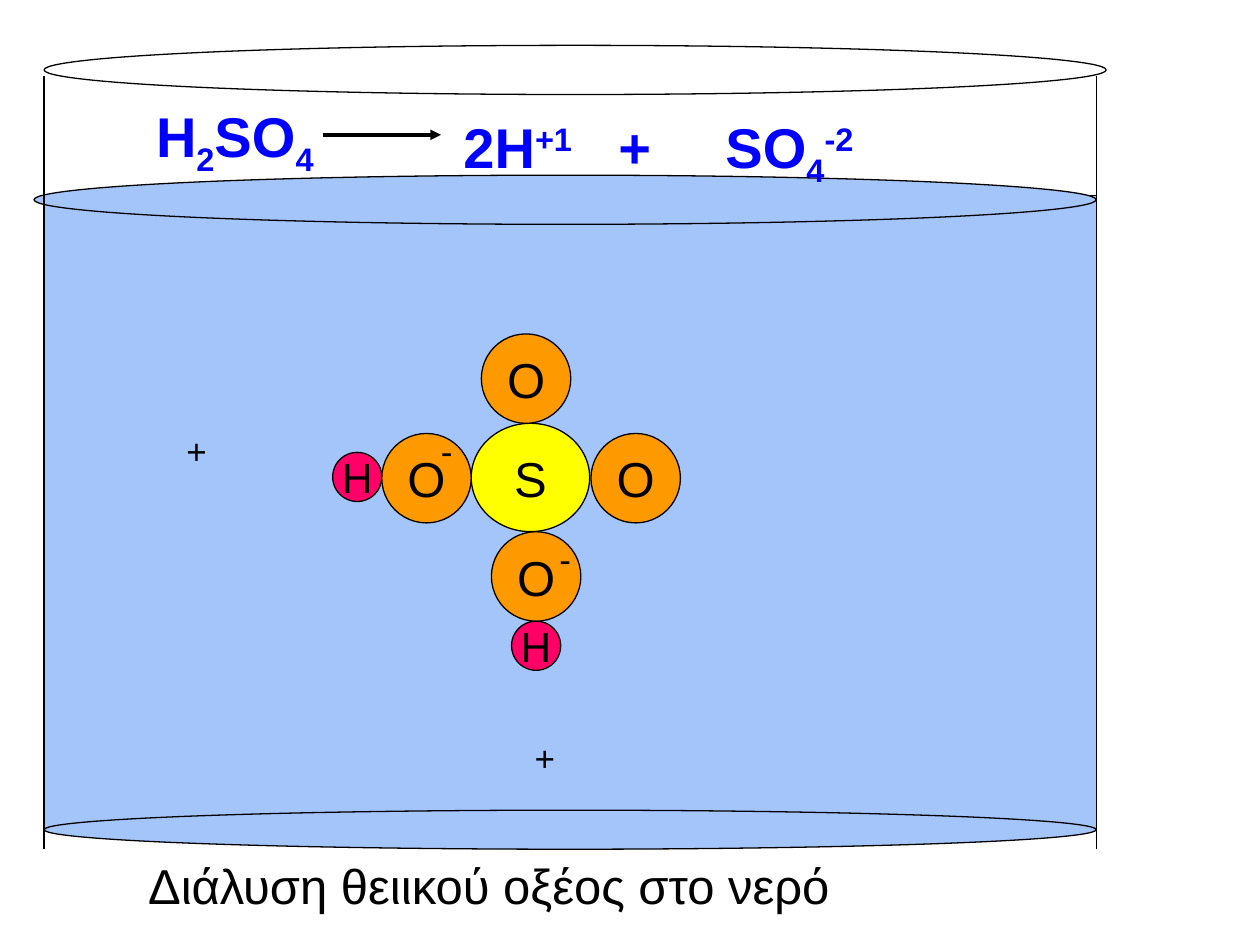
from lxml import etree
from pptx import Presentation
from pptx import util as u
from pptx.dml.color import RGBColor
from pptx.enum import shapes, text
from pptx.oxml.ns import qn

COLORS = {
    "black": "000000",
    "white": "FFFFFF",
    "water": "A4C5FA",
    "sulfur": "FFFF00",
    "oxygen": "FF9900",
    "hydrogen": "FF0066",
    "formula": "0000FF",
}
ATOMS = {
    "S": ("sulfur", 0.94, 0.86, 28),
    "O": ("oxygen", 0.71, 0.71, 28),
    "H": ("hydrogen", 0.39, 0.39, 24),
}
MOLECULE = [
    ("S", 3.74, 3.36),
    ("H", 2.64, 3.59),
    ("H", 4.06, 4.93),
    ("O", 3.9, 4.22),
    ("O", 3.03, 3.44),
    ("O", 3.82, 2.65),
    ("O", 4.69, 3.44),
]
CHARGES = [
    ("+", 1.38, 3.36, 0.31),
    ("-", 3.35, 3.36, 0.39),
    ("+", 4.13, 5.8, 0.39),
    ("-", 4.21, 4.22, 0.55),
]
SUB, SUP = -25000, 30000
LEFT_WALL, RIGHT_WALL = 0.35, 8.7
OVAL = shapes.MSO_SHAPE.OVAL


def rgb(name):
    return RGBColor.from_string(COLORS[name])


def set_font(p, size, color="black", bold=False):
    p.font.name = "Arial"
    p.font.size = u.Pt(size)
    p.font.bold = bold
    p.font.color.rgb = rgb(color)


def add_solid(s, kind, x, y, w, h, fill):
    sp = s.shapes.add_shape(kind, u.Inches(x), u.Inches(y), u.Inches(w), u.Inches(h))
    sp.shadow.inherit = False
    sp.fill.solid()
    sp.fill.fore_color.rgb = rgb(fill)
    sp.line.color.rgb = rgb("black")
    sp.line.width = u.Pt(0.75)
    return sp


def add_line(s, x1, y1, x2, y2, width=0.75, arrow=False):
    c = s.shapes.add_connector(
        shapes.MSO_CONNECTOR.STRAIGHT,
        u.Inches(x1), u.Inches(y1), u.Inches(x2), u.Inches(y2))
    c.line.color.rgb = rgb("black")
    c.line.width = u.Pt(width)
    if arrow:
        etree.SubElement(c.line._get_or_add_ln(), qn("a:tailEnd"), type="triangle")
    etree.SubElement(c._element.spPr, qn("a:effectLst"))


def add_atom(s, symbol, x, y):
    fill, w, h, size = ATOMS[symbol]
    tf = add_solid(s, OVAL, x, y, w, h, fill).text_frame
    tf.word_wrap = False
    tf.vertical_anchor = text.MSO_ANCHOR.MIDDLE
    p = tf.paragraphs[0]
    p.alignment = text.PP_ALIGN.CENTER
    p.add_run().text = symbol
    set_font(p, size)


def add_text(s, x, y, w, h):
    tf = s.shapes.add_textbox(u.Inches(x), u.Inches(y), u.Inches(w), u.Inches(h)).text_frame
    tf.word_wrap = True
    tf.auto_size = text.MSO_AUTO_SIZE.SHAPE_TO_FIT_TEXT
    return tf.paragraphs[0]


def add_label(s, words, x, y, w, h, size):
    p = add_text(s, x, y, w, h)
    p.alignment = text.PP_ALIGN.CENTER
    p.add_run().text = words
    set_font(p, size)


def add_formula(s, parts, x, y, w, tab=None):
    p = add_text(s, x, y, w, 0.63)
    set_font(p, 32, "formula", True)
    if tab:
        tabs = etree.Element(qn("a:tabLst"))
        etree.SubElement(tabs, qn("a:tab"), pos=str(u.Inches(tab)), algn="l")
        p._p.get_or_add_pPr().insert(0, tabs)
    for words, baseline in parts:
        r = p.add_run()
        r.text = words
        if baseline:
            r._r.get_or_add_rPr().set("baseline", str(baseline))


def add_beaker(s):
    w = RIGHT_WALL - LEFT_WALL
    add_solid(s, shapes.MSO_SHAPE.RECTANGLE, LEFT_WALL, 1.55, w, 5.04, "water")
    add_solid(s, OVAL, 0.27, 1.39, 8.43, 0.39, "water")
    add_solid(s, OVAL, LEFT_WALL, 0.36, 8.43, 0.39, "white")
    add_solid(s, OVAL, LEFT_WALL, 6.43, w, 0.31, "water")
    for x in (LEFT_WALL, RIGHT_WALL):
        add_line(s, x, 0.6, x, 6.74)


def add_equation(s):
    add_formula(s, [("H", 0), ("2", SUB), ("SO", 0), ("4", SUB)], 1.14, 0.76, 1.73)
    add_line(s, 2.56, 1.07, 3.5, 1.07, 2, arrow=True)
    add_formula(s, [("2Η", 0), ("+1", SUP)], 3.58, 0.84, 1.18)
    add_formula(s, [("+\tSO", 0), ("4", SUB), ("-2", SUP)], 4.81, 0.84, 2.14, tab=0.85)


def main():
    prs = Presentation()
    prs.slide_width, prs.slide_height = u.Inches(10), u.Inches(7.5)
    s = prs.slides.add_slide(prs.slide_layouts[6])
    add_beaker(s)
    for atom in MOLECULE:
        add_atom(s, *atom)
    for sign, x, y, w in CHARGES:
        add_label(s, sign, x, y, w, 0.43, 20)
    add_equation(s)
    add_label(s, "Διάλυση θειικού οξέος στο νερό", 0.83, 6.74, 6.1, 0.57, 28)
    prs.save("out.pptx")


if __name__ == "__main__":
    main()
